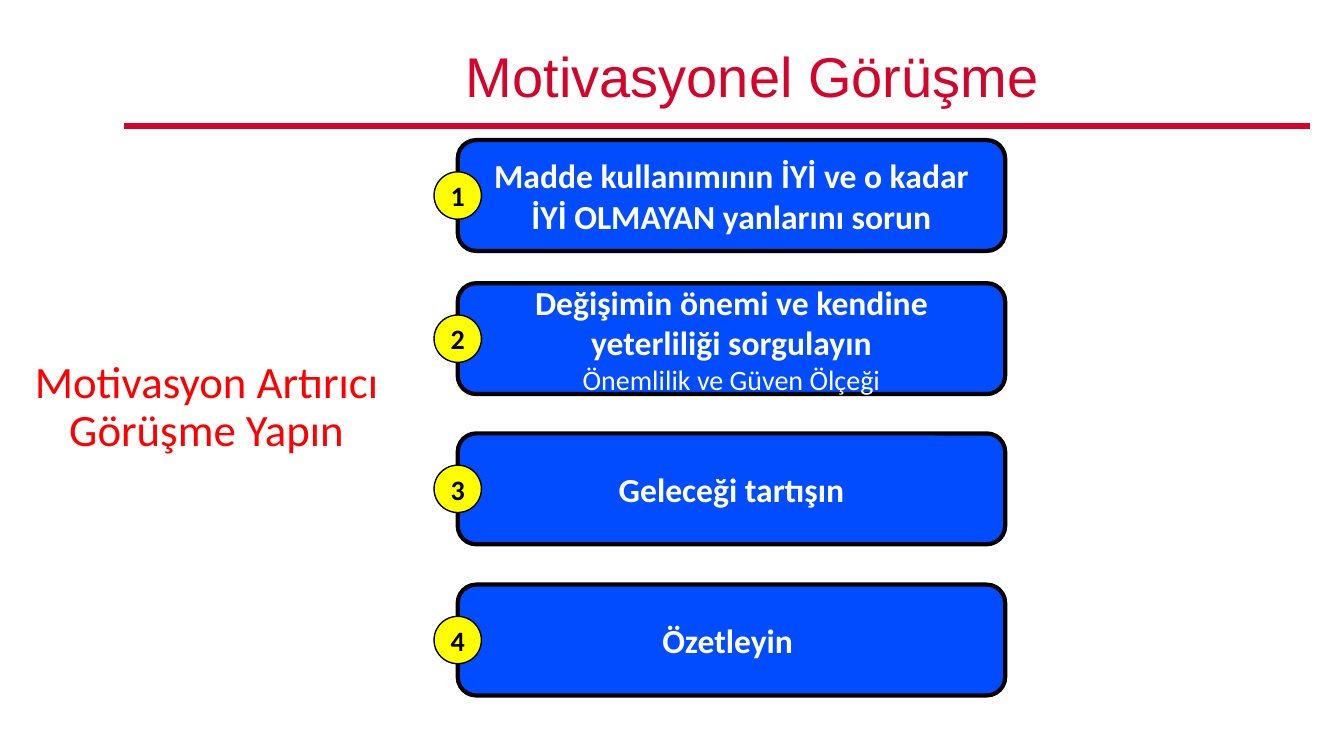
"""Build the motivational interview slide with four numbered steps."""
from lxml import etree
from pptx import Presentation
from pptx.dml.color import RGBColor
from pptx.enum.shapes import MSO_CONNECTOR, MSO_SHAPE
from pptx.enum.text import MSO_ANCHOR, PP_ALIGN
from pptx.oxml.ns import qn
from pptx.util import Inches, Pt

MID, CENTER = MSO_ANCHOR.MIDDLE, PP_ALIGN.CENTER
ROUND, OVAL = MSO_SHAPE.ROUNDED_RECTANGLE, MSO_SHAPE.OVAL
STRAIGHT = MSO_CONNECTOR.STRAIGHT

HEAD = "Motivasyonel Görüşme"
SIDE = "Motivasyon Artırıcı Görüşme Yapın"
STEPS = [
    (1.39, "Madde kullanımının İYİ ve o kadar İYİ OLMAYAN yanlarını sorun", None),
    (2.81, "Değişimin önemi ve kendine yeterliliği sorgulayın",
     "Önemlilik ve Güven Ölçeği"),
    (4.3, "Geleceği tartışın", None),
    (5.8, "Özetleyin ", None),
]
COLORS = {"crimson": "D5042A", "red": "FF0000", "blue": "014CFF",
          "yellow": "FFFF00", "black": "000000", "white": "FFFFFF"}
LEFT, WIDE, HIGH, DOT = 4.54, 5.43, 1.1, 0.47


def color(name):
    return RGBColor.from_string(COLORS[name])


def write(shape, lines, tint, font="Calibri", space=None, inset=None):
    frame = shape.text_frame
    frame.word_wrap = True
    frame.vertical_anchor = MID
    if inset is not None:
        frame.margin_left = frame.margin_right = Inches(inset)
        frame.margin_top = frame.margin_bottom = Inches(inset)
    for i, (text, size, bold) in enumerate(lines):
        para = frame.add_paragraph() if i else frame.paragraphs[0]
        para.alignment = CENTER
        if space:
            para.line_spacing = space
        run = para.add_run()
        run.text = text
        run.font.name = font
        run.font.size = Pt(size)
        run.font.bold = bold
        run.font.color.rgb = color(tint)


def label(slide, area, text, size, tint, font):
    box = slide.shapes.add_textbox(*map(Inches, area))
    write(box, [(text, size, False)], tint, font, space=0.9)


def block(slide, kind, area, fill, width):
    shape = slide.shapes.add_shape(kind, *map(Inches, area))
    shape.shadow.inherit = False
    shape.fill.solid()
    shape.fill.fore_color.rgb = color(fill)
    shape.line.color.rgb = color("black")
    shape.line.width = Pt(width)
    return shape


def main():
    deck = Presentation()
    deck.slide_width, deck.slide_height = Inches(13.33), Inches(7.5)
    slide = deck.slides.add_slide(deck.slide_layouts[6])

    rule = slide.shapes.add_connector(
        STRAIGHT, Inches(1.23), Inches(1.25), Inches(12.99), Inches(1.25))
    rule.line.color.rgb = color("crimson")
    rule.line.width = Pt(4.5)
    etree.SubElement(rule._element.spPr, qn("a:effectLst"))

    label(slide, (0.23, 3.59, 3.64, 0.91), SIDE, 32, "red", "Calibri")
    for num, (top, text, note) in enumerate(STEPS, 1):
        step = block(slide, ROUND, (LEFT, top, WIDE, HIGH), "blue", 3)
        lines = [(text, 24, True)]
        if note:
            lines.append((note, 20, False))
        write(step, lines, "white")
        area = (LEFT - DOT / 2, top + (HIGH - DOT) / 2, DOT, DOT)
        dot = block(slide, OVAL, area, "yellow", 1)
        write(dot, [(str(num), 20, True)], "black", inset=0)
    label(slide, (1.71, 0.39, 11.5, 0.79), HEAD, 40, "crimson", "Arial")

    deck.save("out.pptx")


if __name__ == "__main__":
    main()
